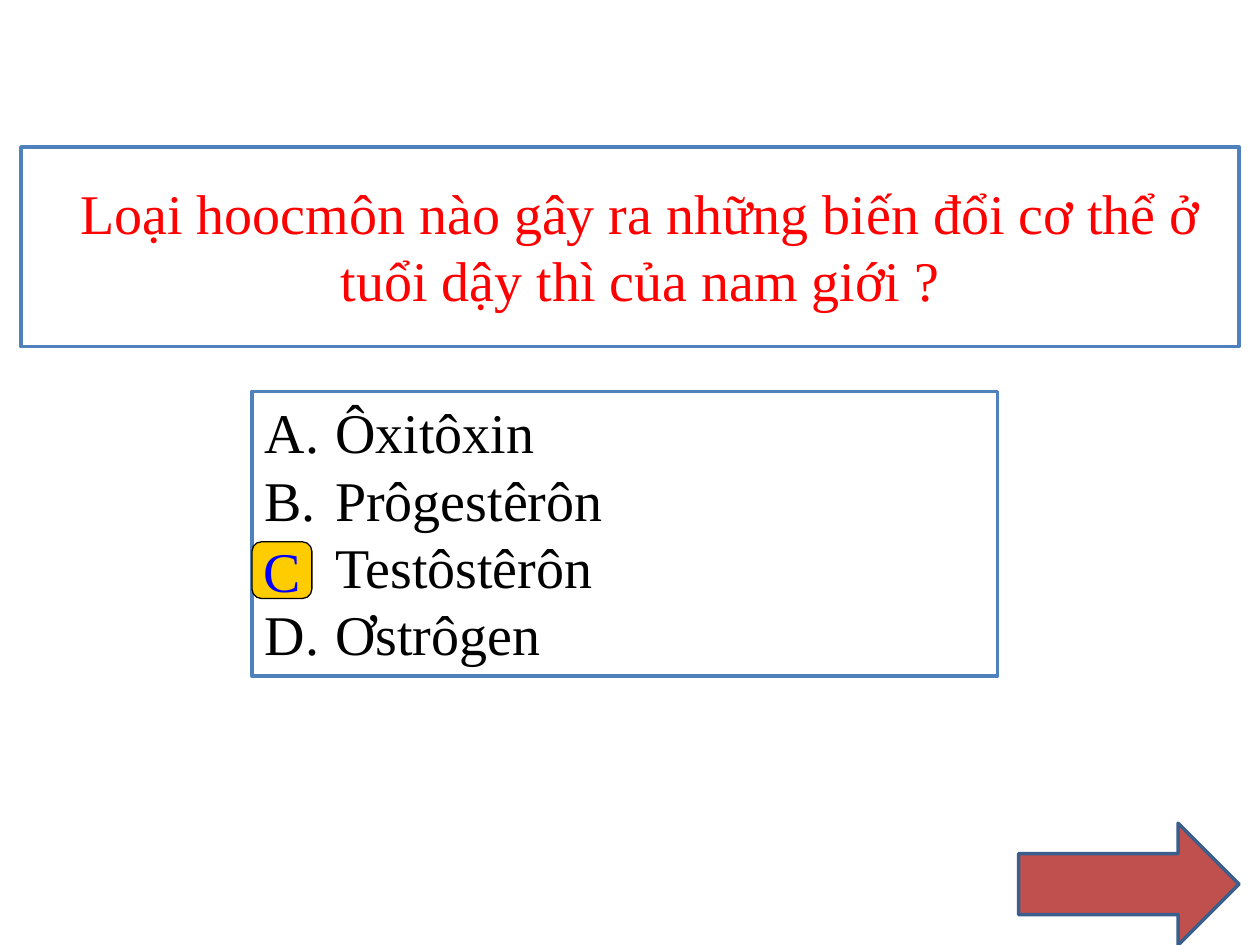
from lxml import etree
from pptx import Presentation
from pptx import util as u
from pptx.dml.color import RGBColor
from pptx.enum import shapes, text
from pptx.oxml.ns import qn

COLORS = {
    "paper": "FFFFFF", "ink": "000000", "question": "FF0000",
    "frame": "4F81BD", "arrow": "C0504D", "arrow_edge": "3A5F8C",
    "badge": "FFCC00", "badge_letter": "0000FF",
}
QUESTION = "Loại hoocmôn nào gây ra những biến đổi cơ thể ở tuổi dậy thì của nam giới ?"
ANSWERS = ["Ôxitôxin", "Prôgestêrôn", "Testôstêrôn", "Ơstrôgen"]


class QuizSlide:
    """Style and current slide; boxes are (column, row, columns, rows) of a 60 x 45 grid."""

    font, size = "Times New Roman", 32
    cell = u.Inches(1) / 6

    def __init__(self, slide):
        self.slide = slide

    def color(self, name):
        return RGBColor.from_string(COLORS[name])

    def lengths(self, box):
        return [u.Emu(round(n * self.cell)) for n in box]

    def place(self, shape, box):
        shape.left, shape.top, shape.width, shape.height = self.lengths(box)

    def paint(self, shape, fill, line, width):
        if fill:
            shape.fill.solid()
            shape.fill.fore_color.rgb = self.color(fill)
        else:
            shape.fill.background()
        shape.line.color.rgb = self.color(line)
        shape.line.width = u.Pt(width)

    def set_text(self, shape, lines, color, align, anchor, wrap=True):
        frame = shape.text_frame
        frame.text = "\n".join(lines)
        frame.word_wrap = wrap
        frame.auto_size = text.MSO_AUTO_SIZE.NONE
        frame.vertical_anchor = anchor
        for paragraph in frame.paragraphs:
            paragraph.alignment = align
            paragraph.space_before = u.Pt(0)
            paragraph.font.name = self.font
            paragraph.font.size = u.Pt(self.size)
            paragraph.font.color.rgb = self.color(color)

    def shape(self, kind, box, fill, line, width):
        shape = self.slide.shapes.add_shape(kind, *self.lengths(box))
        shape.shadow.inherit = False
        self.paint(shape, fill, line, width)
        return shape

    def question(self, wording, box):
        title = self.slide.shapes.title
        self.place(title, box)
        self.set_text(title, [wording], "question", text.PP_ALIGN.CENTER, text.MSO_ANCHOR.TOP)

    def answers(self, options, box):
        body = self.slide.placeholders[1]
        self.place(body, box)
        self.paint(body, "paper", "frame", 2)
        self.set_text(body, options, "ink", text.PP_ALIGN.LEFT, text.MSO_ANCHOR.TOP)
        for paragraph in body.text_frame.paragraphs:
            self.letter(paragraph)

    def letter(self, paragraph):
        """Number the paragraph A., B., C. with a hanging indent."""
        props = paragraph._p.get_or_add_pPr()
        indent = u.Inches(0.56)
        props.set("marL", str(indent))
        props.set("indent", str(-indent))
        defaults = props.find(qn("a:defRPr"))
        defaults.addprevious(etree.Element(qn("a:buFont"), typeface=self.font))
        defaults.addprevious(etree.Element(qn("a:buAutoNum"), type="alphaUcPeriod"))

    def badge(self, letter, box):
        badge = self.shape(shapes.MSO_SHAPE.ROUNDED_RECTANGLE, box, "badge", "ink", 0.75)
        self.set_text(badge, [letter], "badge_letter", text.PP_ALIGN.CENTER,
                      text.MSO_ANCHOR.MIDDLE, wrap=False)


def main():
    deck = Presentation()
    deck.slide_width, deck.slide_height = u.Inches(10), u.Inches(7.5)
    quiz = QuizSlide(deck.slides.add_slide(deck.slide_layouts[1]))
    quiz.shape(shapes.MSO_SHAPE.RIGHT_ARROW, (48.5, 39.2, 10.5, 5.8), "arrow", "arrow_edge", 2)
    quiz.shape(shapes.MSO_SHAPE.RECTANGLE, (1, 7, 58, 9.5), None, "frame", 2)
    quiz.question(QUESTION, (3, 8.2, 55, 7.1))
    quiz.answers(ANSWERS, (12, 18.65, 35.5, 13.55))
    quiz.badge("C", (12, 25.8, 2.85, 2.7))
    deck.save("out.pptx")


if __name__ == "__main__":
    main()
